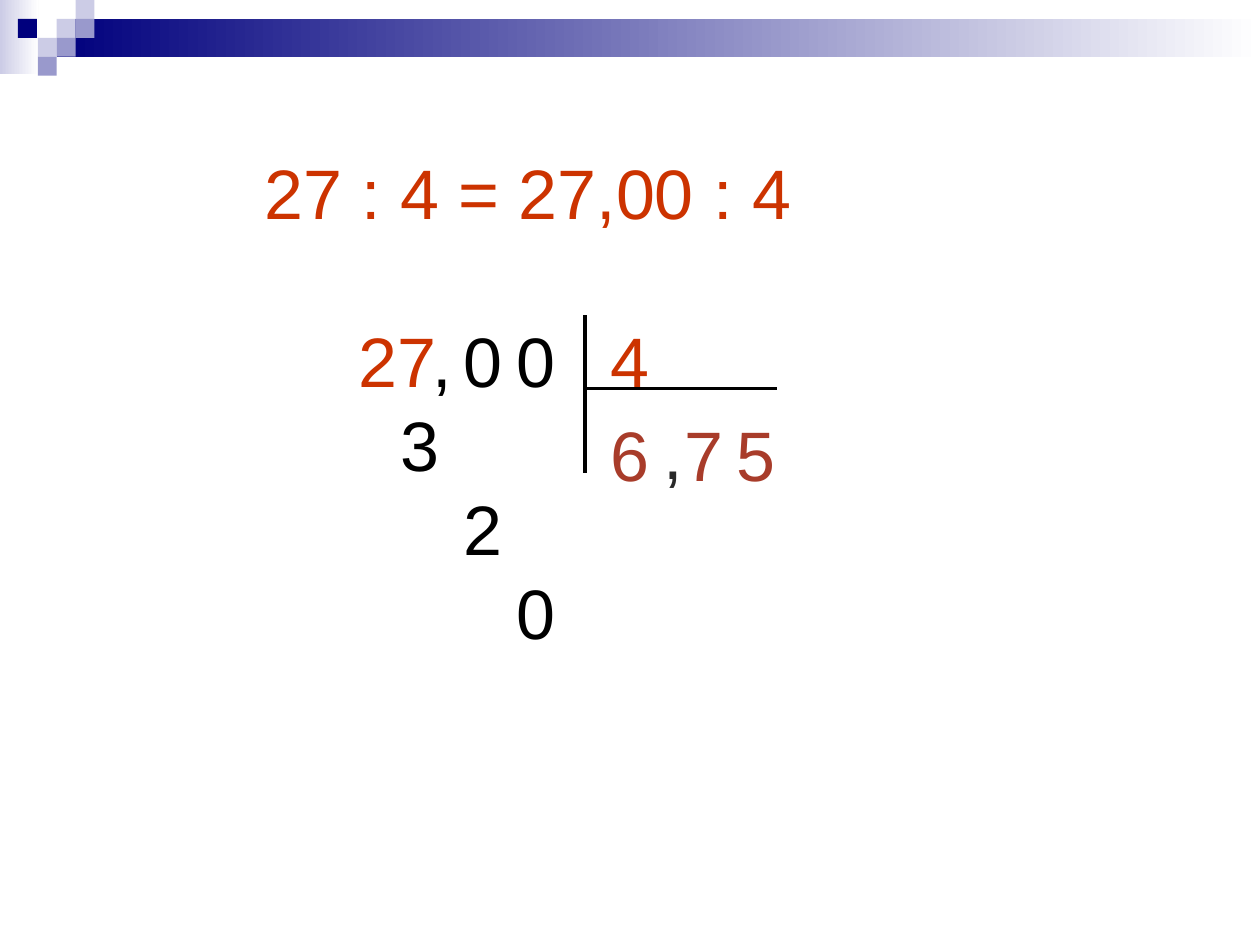
"""Slide showing the long division 27 : 4 = 6,75."""
from lxml import etree
from pptx import Presentation
from pptx.dml.color import RGBColor
from pptx.enum.shapes import MSO_CONNECTOR, MSO_SHAPE
from pptx.oxml.ns import qn
from pptx.util import Inches, Pt

NAVY = RGBColor(0x00, 0x00, 0x7D)
LAVENDER = RGBColor(0xCC, 0xCC, 0xE6)
PERIWINKLE = RGBColor(0x99, 0x99, 0xCC)
WHITE = RGBColor(0xFF, 0xFF, 0xFF)
BLACK = RGBColor(0x00, 0x00, 0x00)
ORANGE = RGBColor(0xCC, 0x33, 0x00)
BRICK = RGBColor(0xA8, 0x3C, 0x2A)
CHARCOAL = RGBColor(0x29, 0x29, 0x29)

TILE = Inches(0.15)

deck = Presentation()
deck.slide_width, deck.slide_height = Inches(10), Inches(7.5)
CELL = deck.slide_width / 120
slide = deck.slides.add_slide(deck.slide_layouts[6])


def add_block(left, top, width, height, color, fades=False):
    block = slide.shapes.add_shape(
        MSO_SHAPE.RECTANGLE, *(int(n * TILE) for n in (left, top, width, height)))
    block.shadow.inherit = False
    block.line.fill.background()
    if fades:
        block.fill.gradient()
        block.fill.gradient_angle = 0
        start, end = block.fill.gradient_stops
        start.color.rgb, start.position = color, 0
        end.color.rgb, end.position = WHITE, 1
    else:
        block.fill.solid()
        block.fill.fore_color.rgb = color


add_block(0, 0, 2.05, 3.9, LAVENDER, fades=True)
add_block(3, 1, 63.67, 2, NAVY, fades=True)
for column, row, color in [
    (3, 1, LAVENDER), (4, 0, LAVENDER), (4, 1, PERIWINKLE), (2, 2, LAVENDER),
    (0.95, 1, NAVY), (3, 2, PERIWINKLE), (2, 3, PERIWINKLE),
]:
    add_block(column, row, 1, 1, color)

EQUATION, DIVIDEND, QUOTIENT = 13, 29, 38
for column, row, width, text, color in [
    (24, EQUATION, 66, "27 : 4 = 27,00 : 4", ORANGE),
    (33, DIVIDEND, 12, "27", ORANGE),
    (40, DIVIDEND, 4, ",", BLACK),
    (43, DIVIDEND, 7, "0", BLACK),
    (48, DIVIDEND, 7, "0", BLACK),
    (57, DIVIDEND, 7, "4", ORANGE),
    (57, QUOTIENT, 7, "6", BRICK),
    (62, QUOTIENT - 0.2, 5, ",", CHARCOAL),
    (64, QUOTIENT, 6, "7", BRICK),
    (69, QUOTIENT, 6, "5", BRICK),
    (37, DIVIDEND + 8, 5, "3", BLACK),
    (43, DIVIDEND + 16, 6, "2", BLACK),
    (48, DIVIDEND + 24, 7, "0", BLACK),
]:
    figure = slide.shapes.add_textbox(
        *(int(n * CELL) for n in (column, row, width, 9.25)))
    frame = figure.text_frame
    frame.word_wrap = True
    frame.margin_top = Inches(0.1)
    frame.margin_bottom = 0
    paragraph = frame.paragraphs[0]
    paragraph.text = text
    paragraph.font.name = "Arial"
    paragraph.font.size = Pt(40)
    paragraph.font.color.rgb = color

for *ends, weight in [(55.7, 30, 55.7, 45, 2.25), (55.7, 37, 74, 37, 1.5)]:
    rule = slide.shapes.add_connector(
        MSO_CONNECTOR.STRAIGHT, *(int(n * CELL) for n in ends))
    rule.line.color.rgb = BLACK
    rule.line.width = Pt(weight)
    etree.SubElement(rule._element.spPr, qn("a:effectLst"))

deck.save("out.pptx")
